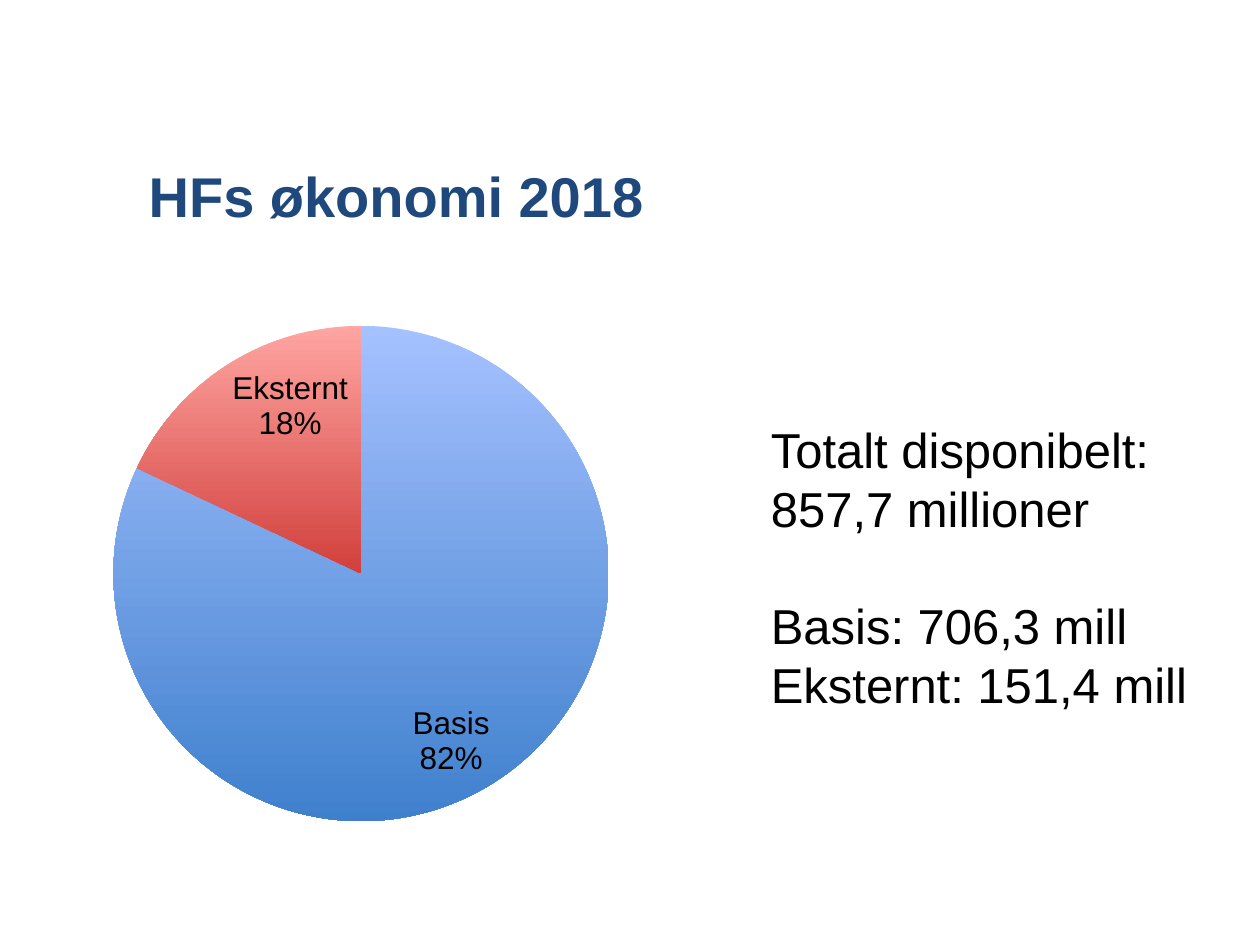
from pptx import Presentation
from pptx.chart.data import CategoryChartData
from pptx.dml.color import RGBColor
from pptx.enum.chart import XL_CHART_TYPE as ChartType, XL_LABEL_POSITION as LabelPosition
from pptx.enum.text import MSO_ANCHOR, MSO_AUTO_SIZE, PP_ALIGN
from pptx.oxml import parse_xml
from pptx.oxml.ns import nsdecls
from pptx.util import Inches, Pt

TITLE = "HFs økonomi 2018"
# category, share in percent, top colour, bottom colour
SHARES = [
    ("Basis", 82, "blue_light", "blue"),
    ("Eksternt", 18, "red_light", "red"),
]
# text, space before in points
AMOUNTS = [
    ("Totalt disponibelt: 857,7 millioner", 0),
    ("Basis: 706,3 mill", 33.5),
    ("Eksternt: 151,4 mill", 0),
]
COLORS = {
    "title": "1F497D",
    "text": "000000",
    "blue_light": "A5C1FF",
    "blue": "3F80CD",
    "red_light": "FFA5A2",
    "red": "D1403C",
}
FONT = "Arial"
PLOT_LAYOUT = {"x": 0.257, "y": 0.114, "w": 0.464, "h": 0.791}


def color(name):
    return RGBColor.from_string(COLORS[name])


def set_font(font, size, color_name, bold=False):
    font.name = FONT
    font.size = Pt(size)
    font.bold = bold
    font.color.rgb = color(color_name)


def add_title(slide):
    title = slide.shapes.title
    title.left, title.top = Inches(1.08), Inches(0.92)
    title.width, title.height = Inches(8.42), Inches(1.25)
    title.text_frame.text = TITLE
    title.text_frame.vertical_anchor = MSO_ANCHOR.MIDDLE
    paragraph = title.text_frame.paragraphs[0]
    paragraph.alignment = PP_ALIGN.LEFT
    set_font(paragraph.font, 32, "title", bold=True)


def fix_plot_area(chart):
    """Pin the inner plot area to fractions of the chart frame."""
    sizes = "".join(f'<c:{key} val="{value}"/>' for key, value in PLOT_LAYOUT.items())
    layout = parse_xml(
        f'<c:layout {nsdecls("c")}><c:manualLayout><c:layoutTarget val="inner"/>'
        f'<c:xMode val="edge"/><c:yMode val="edge"/>{sizes}</c:manualLayout></c:layout>'
    )
    plot_area = chart.plots[0]._element.getparent()
    for old_layout in plot_area.findall(layout.tag):
        plot_area.remove(old_layout)
    plot_area.insert(0, layout)


def add_share_chart(slide):
    data = CategoryChartData()
    data.categories = [share[0] for share in SHARES]
    data.add_series("Series 1", [share[1] for share in SHARES])
    chart = slide.shapes.add_chart(
        ChartType.PIE, Inches(-1.3), Inches(2.02), Inches(8.52), Inches(4.97), data
    ).chart
    chart.has_legend = False
    chart.has_title = False
    set_font(chart.font, 18, "text")
    fix_plot_area(chart)

    plot = chart.plots[0]
    plot.vary_by_categories = True
    for index, (_, _, top, bottom) in enumerate(SHARES):
        slice_format = plot.series[0].points[index].format
        slice_format.line.fill.background()
        fill = slice_format.fill
        fill.gradient()
        fill.gradient_angle = 270
        for stop, name in zip(fill.gradient_stops, (top, bottom)):
            stop.color.rgb = color(name)

    plot.has_data_labels = True
    labels = plot.data_labels
    labels.show_category_name = True
    labels.show_percentage = True
    labels.show_value = False
    labels.number_format = "0%"
    labels.number_format_is_linked = False
    labels.position = LabelPosition.INSIDE_END
    set_font(labels.font, 18, "text")


def add_amounts(slide):
    box = slide.shapes.add_textbox(Inches(6.02), Inches(3.28), Inches(3.7), Inches(2.46))
    frame = box.text_frame
    frame.word_wrap = True
    frame.auto_size = MSO_AUTO_SIZE.SHAPE_TO_FIT_TEXT
    frame.text = "\n".join(text for text, _ in AMOUNTS)
    for paragraph, (_, space_before) in zip(frame.paragraphs, AMOUNTS):
        paragraph.space_before = Pt(space_before)
        set_font(paragraph.font, 28, "text")


def main():
    presentation = Presentation()
    presentation.slide_width, presentation.slide_height = Inches(10), Inches(7.5)
    slide = presentation.slides.add_slide(presentation.slide_layouts[5])
    add_title(slide)
    add_share_chart(slide)
    add_amounts(slide)
    presentation.save("out.pptx")


if __name__ == "__main__":
    main()
